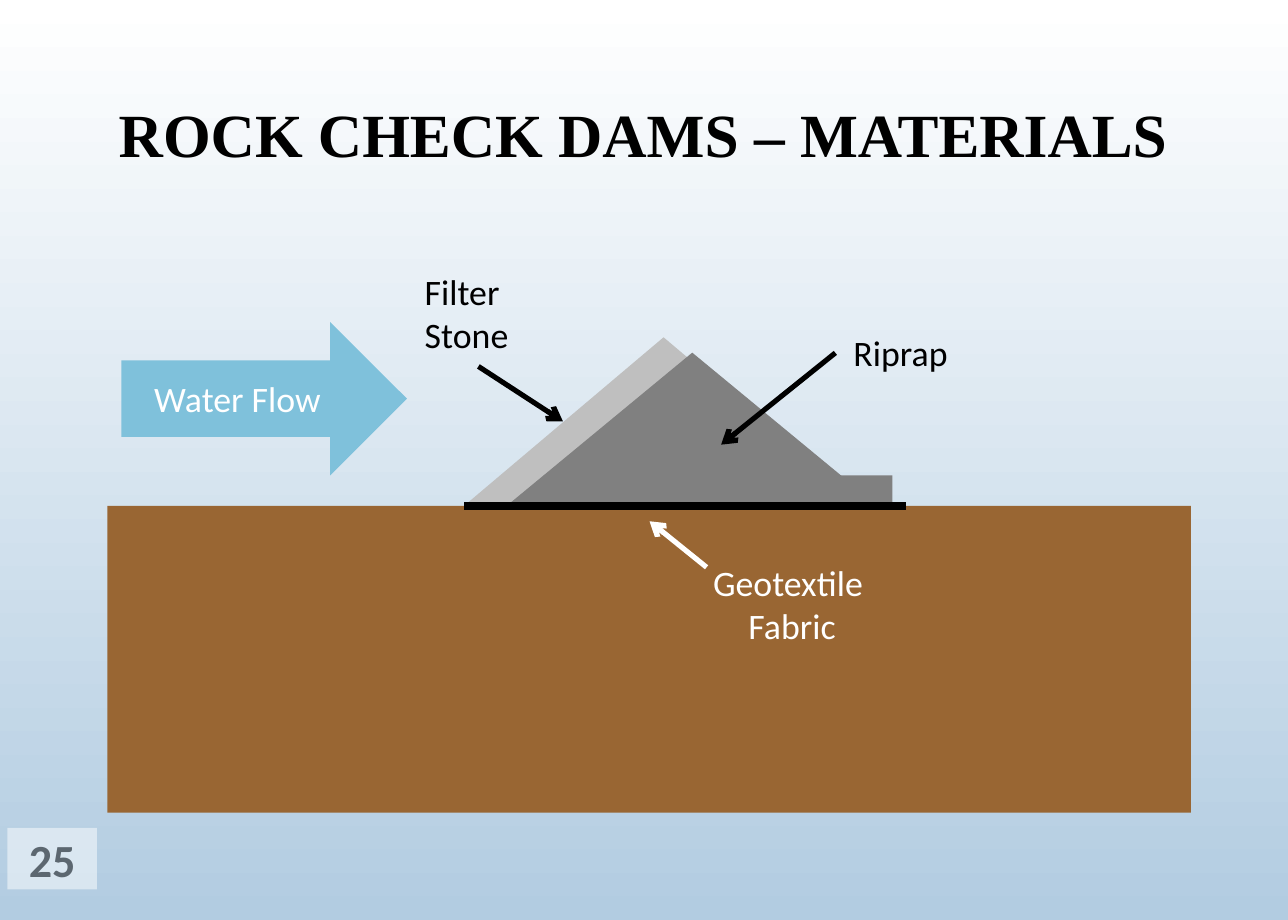
from dataclasses import dataclass

from lxml import etree
from pptx import Presentation
from pptx.dml.color import RGBColor
from pptx.enum.shapes import MSO_CONNECTOR, MSO_SHAPE
from pptx.enum.text import MSO_ANCHOR, PP_ALIGN
from pptx.oxml.ns import qn
from pptx.util import Pt

RECT = MSO_SHAPE.RECTANGLE
TRIANGLE = MSO_SHAPE.ISOSCELES_TRIANGLE
RIGHT_ARROW = MSO_SHAPE.RIGHT_ARROW
STRAIGHT = MSO_CONNECTOR.STRAIGHT
LEFT, CENTER = PP_ALIGN.LEFT, PP_ALIGN.CENTER
TOP, MIDDLE = MSO_ANCHOR.TOP, MSO_ANCHOR.MIDDLE
SIDE_LEFT, SIDE_BOTTOM = 1, 2


@dataclass(frozen=True)
class Theme:
    black: str = "000000"
    white: str = "FFFFFF"
    sky: str = "B2CCE1"
    soil: str = "996633"
    riprap: str = "808080"
    filter_stone: str = "BFBFBF"
    water: str = "7FC1DB"
    number: str = "5C6770"
    title_font: str = "Times New Roman"
    body_font: str = "Calibri"
    title_size: int = 24
    body_size: int = 14
    number_size: int = 18


def write(tf, text, *, font, size, color, bold=False, align=LEFT, anchor=TOP, spacing=None):
    tf.word_wrap = True
    tf.vertical_anchor = anchor
    tf.text = text
    for p in tf.paragraphs:
        p.alignment = align
        p.line_spacing = spacing
        for r in p.runs:
            r.font.name = font
            r.font.size = Pt(size)
            r.font.bold = bold
            r.font.color.rgb = RGBColor.from_string(color)


class Deck:
    def __init__(self, prs, theme):
        self.theme = theme
        self.s = prs.slides.add_slide(prs.slide_layouts[5])

    def background(self, top, bottom):
        fill = self.s.background.fill
        fill.gradient()
        fill.gradient_angle = 270
        for stop, color in zip(fill.gradient_stops, (top, bottom)):
            stop.color.rgb = RGBColor.from_string(color)

    def title(self, text, x, y, w, h):
        sp = self.s.shapes.title
        sp.left, sp.top, sp.width, sp.height = Pt(x), Pt(y), Pt(w), Pt(h)
        t = self.theme
        write(sp.text_frame, text, font=t.title_font, size=t.title_size, color=t.black,
              bold=True, align=CENTER, anchor=MIDDLE, spacing=0.9)

    def shape(self, kind, x, y, w, h, color, alpha=None):
        sp = self.s.shapes.add_shape(kind, Pt(x), Pt(y), Pt(w), Pt(h))
        sp.shadow.inherit = False
        sp.fill.solid()
        sp.fill.fore_color.rgb = RGBColor.from_string(color)
        sp.line.fill.background()
        if alpha is not None:
            clr = sp.fill._xPr.find(qn("a:solidFill"))[0]
            etree.SubElement(clr, qn("a:alpha")).set("val", str(alpha * 1000))
        return sp

    def label(self, text, x, y, w, h, color, align=LEFT):
        sp = self.s.shapes.add_textbox(Pt(x), Pt(y), Pt(w), Pt(h))
        t = self.theme
        write(sp.text_frame, text, font=t.body_font, size=t.body_size, color=color, align=align)
        return sp

    def line(self, x1, y1, x2, y2, color, width, arrow=False, source=None, side=None):
        cx = self.s.shapes.add_connector(STRAIGHT, Pt(x1), Pt(y1), Pt(x2), Pt(y2))
        if source is not None:
            cx.begin_connect(source, side)
        cx.line.width = Pt(width)
        cx.line.color.rgb = RGBColor.from_string(color)
        if arrow:
            ln = cx.line._get_or_add_ln()
            etree.SubElement(ln, qn("a:tailEnd")).set("type", "arrow")
        etree.SubElement(cx._element.spPr, qn("a:effectLst"))

    def page_number(self, text, x, y, w, h):
        t = self.theme
        sp = self.shape(RECT, x, y, w, h, t.white, alpha=50)
        write(sp.text_frame, text, font=t.body_font, size=t.number_size, color=t.number,
              bold=True, align=CENTER, anchor=MIDDLE)


def main():
    prs = Presentation()
    prs.slide_width, prs.slide_height = Pt(504), Pt(360)
    t = Theme()
    d = Deck(prs, t)
    ground = 198

    d.background(t.white, t.sky)
    d.title("ROCK CHECK DAMS – MATERIALS", 37.4, 12.2, 428.4, 83.5)

    d.shape(RECT, 315.4, 186, 33.8, ground - 186, t.riprap)
    d.shape(TRIANGLE, 181.6, 132, 156.2, ground - 132, t.filter_stone)
    d.shape(TRIANGLE, 198.2, 138, 145.4, ground - 138, t.riprap)
    d.shape(RECT, 42, ground, 424, 120, t.soil)
    d.line(354.5, ground, 181.6, ground, t.black, 3)

    d.shape(RIGHT_ARROW, 47.5, 126, 111.7, 60, t.water)
    d.label("Water Flow", 53.3, 144, 83.5, 24.2, t.white)

    riprap = d.label("Riprap", 326.9, 126, 56.2, 24.2, t.black)
    d.line(326.9, 138, 282.2, 174, t.black, 2, arrow=True, source=riprap, side=SIDE_LEFT)

    d.label("Geotextile \nFabric", 270.7, 216, 78.5, 41.2, t.white, align=CENTER)
    d.line(276.5, 222, 254.2, 204, t.white, 2, arrow=True)

    stone = d.label("Filter Stone", 159.1, 102.2, 56.2, 41.2, t.black)
    d.line(187.2, 143.4, 220.3, 164.9, t.black, 2, arrow=True, source=stone, side=SIDE_BOTTOM)

    d.page_number("25", 2.9, 324, 35, 24)
    prs.save("out.pptx")


if __name__ == "__main__":
    main()
